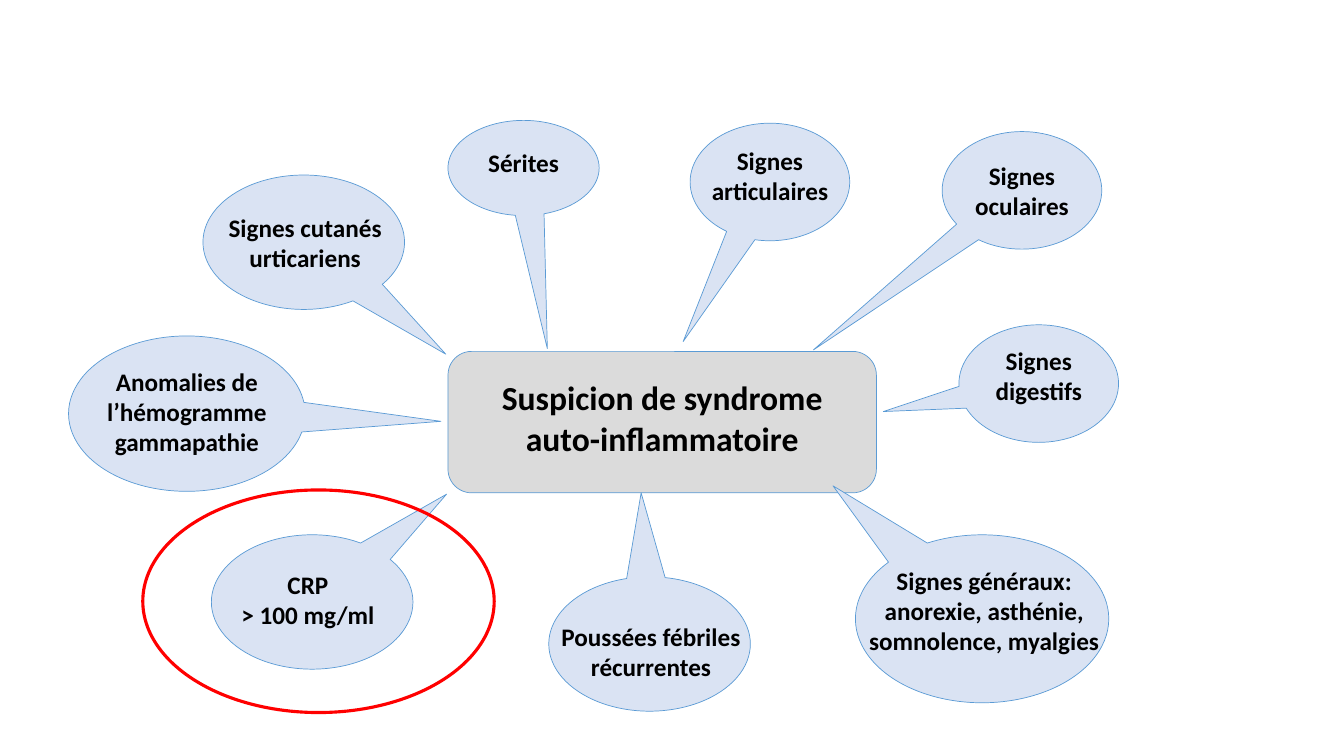
"""Build a slide of clinical signs pointing to an auto-inflammatory syndrome."""
from pptx import Presentation
from pptx.dml.color import RGBColor as RGB
from pptx.enum.shapes import MSO_SHAPE as Kind
from pptx.enum.text import PP_ALIGN as Align
from pptx.util import Pt

HUES = {"grey": "DBDBDB", "pale": "DAE3F3", "blue": "5B9BD5",
        "red": "FF0000", "ink": "000000"}

SIGNS = [
    ((145, 125, 144, 96), (318.5, 253), (143, 148, 150, 51),
     "Signes cutanés\nurticariens"),
    ((392, 412, 144, 96), (458, 352), (384, 440, 162, 51),
     "Poussées fébriles\nrécurrentes"),
    ((320, 86, 108, 68), (391, 249), (329, 101.5, 90, 29), "Sérites"),
    ((493, 88, 114, 84), (488, 244), (487, 100, 126, 51),
     "Signes\narticulaires"),
    ((685, 232, 114, 84), (631, 294), (685, 243, 114, 51),
     "Signes\ndigestifs"),
    ((673, 94, 114, 84), (581, 250), (676, 111, 108, 51),
     "Signes\noculaires"),
    ((151, 382, 144, 96), (319, 353), (145, 403, 150, 51),
     "CRP\n> 100 mg/ml"),
    ((611, 382, 181, 120), (595, 347), (601, 400, 204, 73),
     "Signes généraux: anorexie, asthénie, somnolence, myalgies"),
    ((49, 240, 169, 111), (315, 301), (60, 258, 147, 73),
     "Anomalies de l’hémogramme\ngammapathie"),
]


def hue(name):
    return RGB.from_string(HUES[name])


def add_form(shapes, kind, box, fill, line="blue", width=0.5):
    form = shapes.add_shape(kind, *map(Pt, box))
    form.shadow.inherit = False
    if fill:
        form.fill.solid()
        form.fill.fore_color.rgb = hue(fill)
    else:
        form.fill.background()
    form.line.color.rgb = hue(line)
    form.line.width = Pt(width)
    return form


def add_text(shapes, box, text, size=18):
    frame = shapes.add_textbox(*map(Pt, box)).text_frame
    frame.word_wrap = True
    frame.text = text
    for para in frame.paragraphs:
        para.alignment = Align.CENTER
        for run in para.runs:
            run.font.name = "Calibri"
            run.font.size = Pt(size)
            run.font.bold = True
            run.font.color.rgb = hue("ink")


def add_sign(shapes, box, tip, place, text):
    group = shapes.add_group_shape().shapes
    form = add_form(group, Kind.OVAL_CALLOUT, box, "pale")
    left, top, width, height = box
    form.adjustments[0] = (tip[0] - left) / width - 0.5
    form.adjustments[1] = (tip[1] - top) / height - 0.5
    add_text(group, place, text)


def main():
    deck = Presentation()
    deck.slide_width, deck.slide_height = Pt(960), Pt(540)
    shapes = deck.slides.add_slide(deck.slide_layouts[6]).shapes
    add_form(shapes, Kind.ROUNDED_RECTANGLE, (320, 251, 306, 101), "grey")
    add_text(shapes, (320, 266, 306, 65),
             "Suspicion de syndrome\nauto-inflammatoire", 24)
    for sign in SIGNS:
        add_sign(shapes, *sign)
    add_form(shapes, Kind.OVAL, (102, 350, 251, 159), None, "red", 2.25)
    deck.save("out.pptx")


if __name__ == "__main__":
    main()
